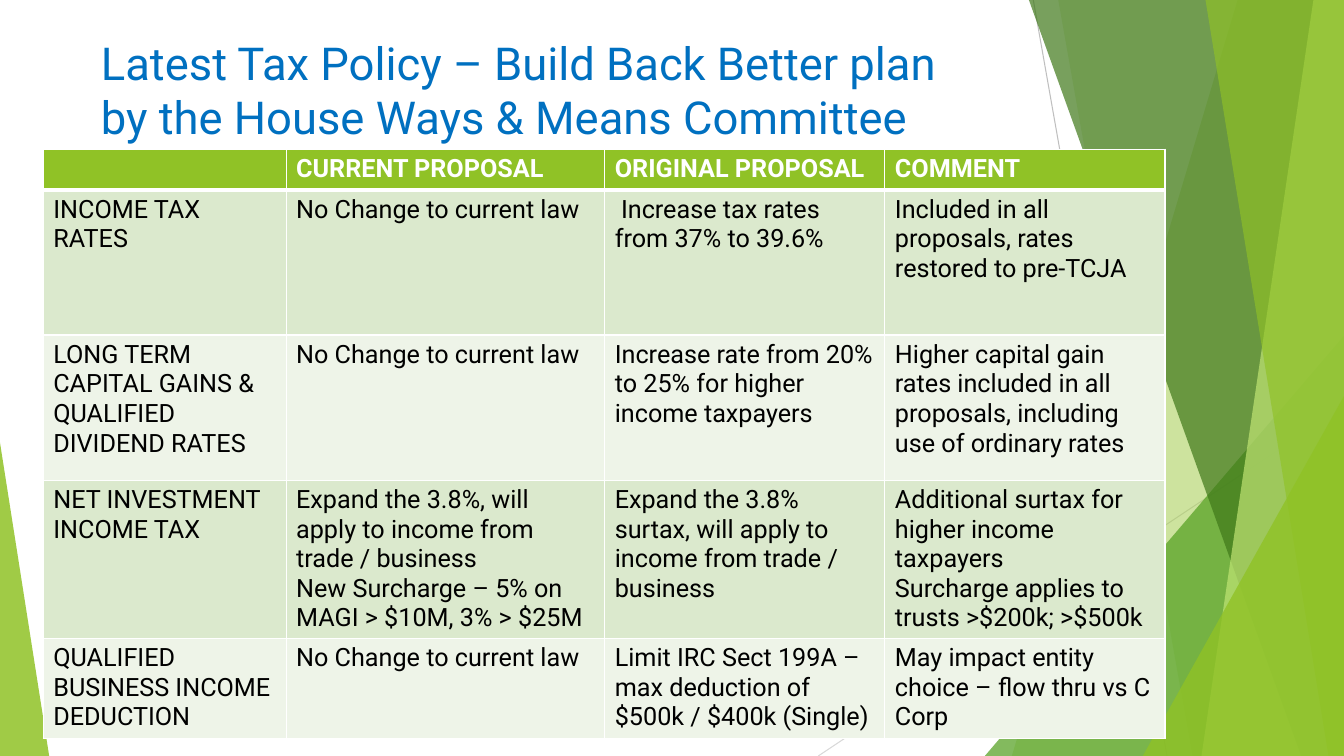
from lxml.etree import SubElement
from pptx import Presentation
from pptx.dml.color import RGBColor
from pptx.enum.shapes import MSO_CONNECTOR, MSO_SHAPE
from pptx.enum.text import MSO_ANCHOR, MSO_AUTO_SIZE, PP_ALIGN
from pptx.oxml.ns import qn
from pptx.util import Cm, Pt

WIDE, HIGH = 33.87, 19.05
FONT = "Roboto"
HUES = {
    "title": "0070C0", "lime": "90C226", "green": "54A021",
    "forest": "3F7819", "pale": "C0E474", "white": "FFFFFF",
    "black": "000000", "odd": "DBE9CD", "even": "EEF4E8",
    "grey": "BFBFBF", "light": "D9D9D9",
}
COLS = [6.12, 8.03, 7.06, 7.06]
TALL = [1.02, 3.66, 3.66, 3.98, 2.53]
ROWS = [
    ["", "CURRENT PROPOSAL", "ORIGINAL PROPOSAL", "COMMENT"],
    ["INCOME TAX RATES", "No Change to current law",
     " Increase tax rates from 37% to 39.6%",
     "Included in all proposals, rates restored to pre-TCJA"],
    ["LONG TERM CAPITAL GAINS & QUALIFIED DIVIDEND RATES",
     "No Change to current law",
     "Increase rate from 20% to 25% for higher income taxpayers",
     "Higher capital gain rates included in all proposals, "
     "including use of ordinary rates"],
    ["NET INVESTMENT INCOME TAX",
     "Expand the 3.8%, will apply to income from trade / business\n"
     "New Surcharge – 5% on MAGI > $10M, 3% > $25M",
     "Expand the 3.8% surtax, will apply to income from trade / business",
     "Additional surtax for higher income taxpayers\n"
     "Surcharge applies to trusts >$200k; >$500k"],
    ["QUALIFIED BUSINESS INCOME DEDUCTION", "No Change to current law",
     "Limit IRC Sect 199A – max deduction of $500k / $400k (Single)",
     "May impact entity choice – flow thru vs C Corp"],
]


def tint(name):
    return RGBColor.from_string(HUES[name])


def write(frame, text, size=18, hue="black", bold=False):
    frame.word_wrap = True
    frame.text = text
    for para in frame.paragraphs:
        para.alignment = PP_ALIGN.LEFT
        para.font.name = FONT
        para.font.size = Pt(size)
        para.font.bold = bold
        para.font.color.rgb = tint(hue)


def paint(shape, hue, alpha):
    shape.shadow.inherit = False
    shape.fill.solid()
    shape.fill.fore_color.rgb = tint(hue)
    shape.line.fill.background()
    color = shape.fill._xPr.find(qn("a:solidFill"))[0]
    SubElement(color, qn("a:alpha"), val=str(alpha * 1000))


def add_line(slide, start, end, hue):
    ends = [Cm(v) for v in (*start, *end)]
    line = slide.shapes.add_connector(MSO_CONNECTOR.STRAIGHT, *ends)
    line.line.color.rgb = tint(hue)
    line.line.width = Pt(0.75)
    SubElement(line._element.spPr, qn("a:effectLst"))


def add_band(slide, top, base, hue, alpha):
    """Fill from a slanted left edge to the right side of the slide."""
    pen = slide.shapes.build_freeform(Cm(top), 0)
    pen.add_line_segments([(Cm(WIDE), 0), (Cm(WIDE), Cm(HIGH)),
                           (Cm(base), Cm(HIGH))], close=True)
    paint(pen.convert_to_shape(), hue, alpha)


def add_wedge(slide, left, top, right, tip, hue, alpha):
    wedge = slide.shapes.add_shape(
        MSO_SHAPE.ISOSCELES_TRIANGLE, Cm(left), Cm(top),
        Cm(right - left), Cm(HIGH - top))
    wedge.adjustments[0] = tip
    paint(wedge, hue, alpha)


def add_edges(cell, head):
    props = cell._tc.get_or_add_tcPr()
    for side in "LRTB":
        width = Pt(3) if head and side == "B" else Pt(1)
        edge = SubElement(props, qn(f"a:ln{side}"), w=str(width))
        fill = SubElement(edge, qn("a:solidFill"))
        SubElement(fill, qn("a:srgbClr"), val=HUES["white"])


def add_grid(slide, left, top):
    grid = slide.shapes.add_table(
        len(ROWS), len(COLS), Cm(left), Cm(top),
        Cm(sum(COLS)), Cm(sum(TALL))).table
    for col, width in zip(grid.columns, COLS):
        col.width = Cm(width)
    for r, texts in enumerate(ROWS):
        head = r == 0
        grid.rows[r].height = Cm(TALL[r])
        back = "lime" if head else "odd" if r % 2 else "even"
        for c, text in enumerate(texts):
            cell = grid.cell(r, c)
            add_edges(cell, head)
            cell.fill.solid()
            cell.fill.fore_color.rgb = tint(back)
            write(cell.text_frame, text, bold=head,
                  hue="white" if head else "black")


def add_title(slide, text):
    title = slide.shapes.title
    title.left, title.top = Cm(2.29), Cm(0.75)
    title.width, title.height = Cm(22.73), Cm(2.9)
    frame = title.text_frame
    frame.auto_size = MSO_AUTO_SIZE.NONE
    frame.vertical_anchor = MSO_ANCHOR.TOP
    write(frame, text, size=32.4, hue="title")


def main():
    deck = Presentation()
    deck.slide_width, deck.slide_height = Cm(WIDE), Cm(HIGH)
    slide = deck.slides.add_slide(deck.slide_layouts[5])

    # Backdrop
    add_line(slide, (26.04, 0), (29.41, HIGH), "grey")
    add_line(slide, (WIDE, 10.24), (20.62, HIGH), "light")
    add_band(slide, 31.19, 25.5, "lime", 30)
    add_band(slide, 26.67, 30.05, "lime", 20)
    add_wedge(slide, 24.82, 8.46, WIDE, 1, "green", 72)
    add_band(slide, 25.93, 32.79, "forest", 70)
    add_band(slide, 33.1, 30.28, "pale", 70)
    add_band(slide, 30.38, 33.48, "lime", 65)
    add_wedge(slide, 28.8, 9.98, WIDE, 1, "lime", 80)
    add_wedge(slide, 0, 11.15, 1.24, 0, "lime", 85)

    # Title and table
    add_title(slide, "Latest Tax Policy – Build Back Better plan "
                     "by the House Ways & Means Committee")
    add_grid(slide, 1.09, 3.76)
    deck.save("out.pptx")


if __name__ == "__main__":
    main()
